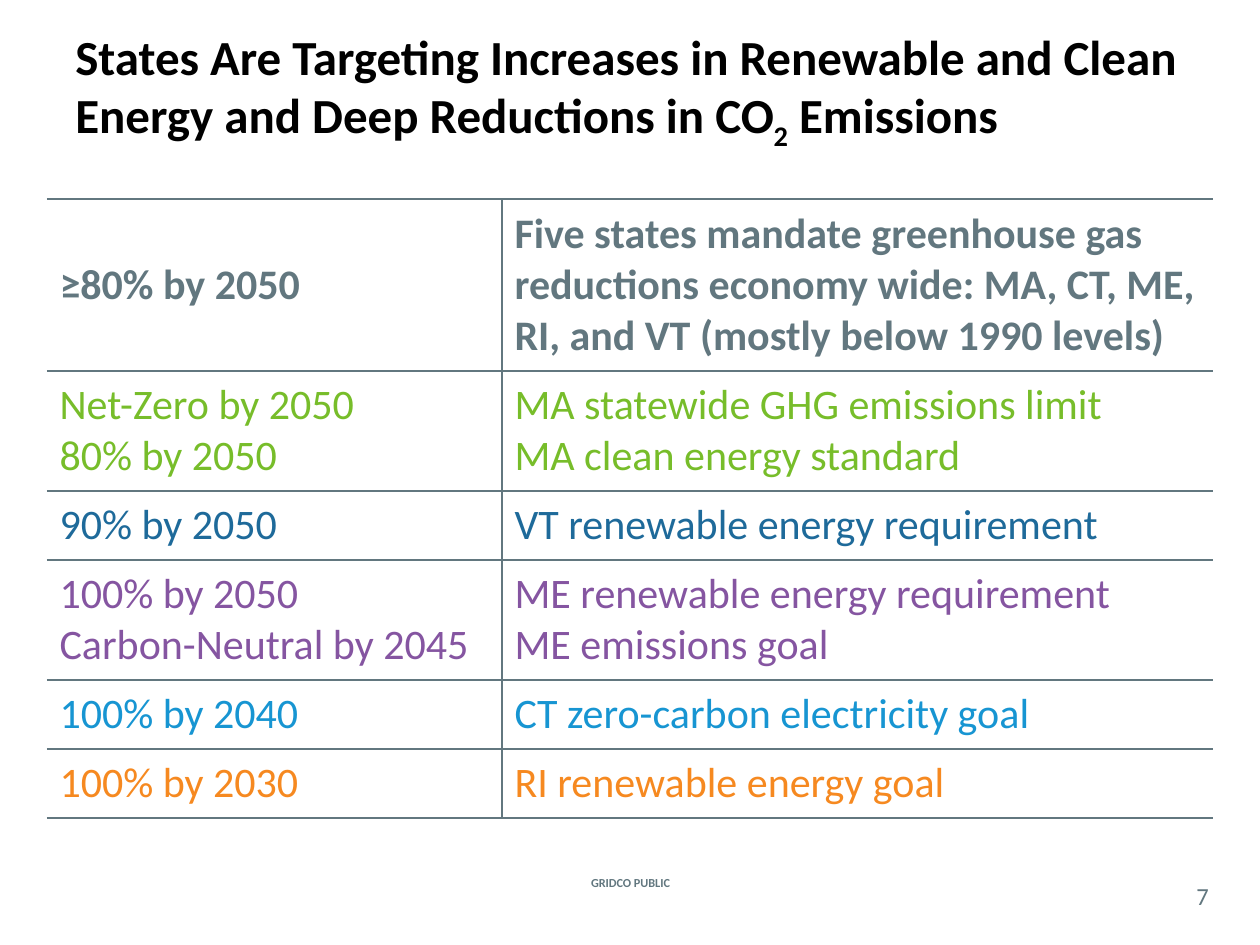
"""Build the slide on state clean energy and emissions targets."""
from dataclasses import dataclass

from lxml import etree
from pptx import Presentation
from pptx.dml.color import RGBColor
from pptx.enum.text import MSO_ANCHOR, PP_ALIGN
from pptx.oxml.ns import qn
from pptx.util import Pt

MID = MSO_ANCHOR.MIDDLE
LEFT, CENTER = PP_ALIGN.LEFT, PP_ALIGN.CENTER
SCALE = 914400 / 126


@dataclass(frozen=True)
class Theme:
    font: str = "Calibri"
    black: str = "000000"
    slate: str = "62777F"
    green: str = "77BD2A"
    navy: str = "1E6A9A"
    purple: str = "8555A1"
    blue: str = "1795D2"
    orange: str = "F68920"
    head: int = 28
    body: int = 24
    page: int = 14
    foot: int = 7


THEME = Theme()

TITLE = [[("States Are Targeting Increases in Renewable and Clean "
           "Energy and Deep Reductions in CO", 0), ("2", -25), (" Emissions", 0)]]
FOOTER = "GRIDCO PUBLIC"
PAGE = "7"
GOALS = [
    (172, THEME.slate, ["≥80% by 2050"],
     ["Five states mandate greenhouse gas reductions economy wide: "
      "MA, CT, ME, RI, and VT (mostly below 1990 levels)"]),
    (120, THEME.green, ["Net-Zero by 2050", "80% by 2050"],
     ["MA statewide GHG emissions limit", "MA clean energy standard"]),
    (69, THEME.navy, ["90% by 2050"], ["VT renewable energy requirement"]),
    (120, THEME.purple, ["100% by 2050", "Carbon-Neutral by 2045"],
     ["ME renewable energy requirement", "ME emissions goal"]),
    (69, THEME.blue, ["100% by 2040"], ["CT zero-carbon electricity goal"]),
    (69, THEME.orange, ["100% by 2030"], ["RI renewable energy goal"]),
]
WIDTHS = [455, 711]


def px(num):
    return round(num * SCALE)


def write(frame, lines, size, color, bold=False, align=LEFT):
    for num, line in enumerate(lines):
        para = frame.add_paragraph() if num else frame.paragraphs[0]
        para.alignment = align
        for text, shift in [(line, 0)] if isinstance(line, str) else line:
            run = para.add_run()
            run.text = text
            font = run.font
            font.name, font.size, font.bold = THEME.font, Pt(size), bold
            font.color.rgb = RGBColor.from_string(color)
            if shift:
                run._r.get_or_add_rPr().set("baseline", str(shift * 1000))


def label(slide, area, lines, inset=None, **form):
    frame = slide.shapes.add_textbox(*map(px, area)).text_frame
    frame.word_wrap = True
    frame.vertical_anchor = MID
    if inset is not None:
        frame.margin_left = frame.margin_right = inset
        frame.margin_top = frame.margin_bottom = inset
    write(frame, lines, **form)


def border(cell, sides):
    props = cell._tc.get_or_add_tcPr()
    for spot, side in enumerate("LRTB"):
        line = etree.Element(qn(f"a:ln{side}"), w=str(Pt(1)))
        if side in sides:
            fill = etree.SubElement(line, qn("a:solidFill"))
            etree.SubElement(fill, qn("a:srgbClr"), val=THEME.slate)
        else:
            etree.SubElement(line, qn("a:noFill"))
        props.insert(spot, line)


def goals(slide, left, top):
    high = sum(goal[0] for goal in GOALS)
    area = map(px, (left, top, sum(WIDTHS), high))
    table = slide.shapes.add_table(len(GOALS), len(WIDTHS), *area).table
    table.first_row = table.horz_banding = False
    for col, width in zip(table.columns, WIDTHS):
        col.width = px(width)
    for num, (high, color, *pair) in enumerate(GOALS):
        table.rows[num].height = px(high)
        for col, lines in enumerate(pair):
            cell = table.cell(num, col)
            cell.fill.background()
            cell.vertical_anchor = MID
            border(cell, "LTB" if col else "RTB")
            write(cell.text_frame, lines, THEME.body, color, bold=num == 0)


def main():
    deck = Presentation()
    deck.slide_width, deck.slide_height = px(1260), px(945)
    slide = deck.slides.add_slide(deck.slide_layouts[6])
    label(slide, (538, 872, 185, 21), [FOOTER], size=THEME.foot,
          color=THEME.slate, bold=True, align=CENTER)
    label(slide, (1176, 877, 53, 37), [PAGE], inset=0, size=THEME.page,
          color=THEME.slate, align=CENTER)
    label(slide, (63, 10, 1134, 158), TITLE, size=THEME.head,
          color=THEME.black, bold=True)
    goals(slide, 47, 199)
    deck.save("out.pptx")


if __name__ == "__main__":
    main()
